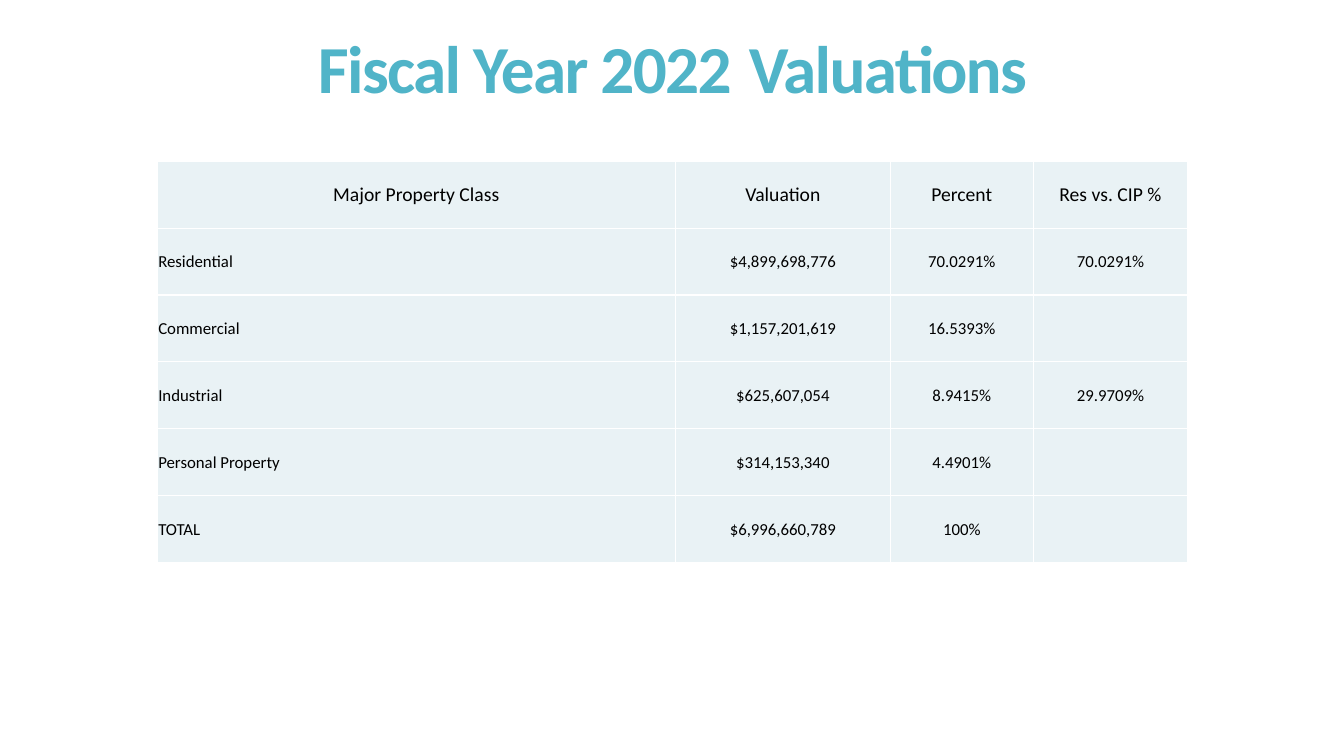
from dataclasses import dataclass

from lxml.etree import SubElement
from pptx import Presentation
from pptx.dml.color import RGBColor
from pptx.enum.text import MSO_ANCHOR, PP_ALIGN
from pptx.oxml.ns import qn
from pptx.util import Inches, Pt


@dataclass(frozen=True)
class Theme:
    font: str = "Calibri"
    title_color: str = "50B4C8"
    text_color: str = "000000"
    cell_color: str = "E9F2F5"
    border_color: str = "FFFFFF"
    title_size: int = 48
    title_gap_size: int = 54
    header_size: int = 14
    body_size: int = 12
    border_width: int = 1


THEME = Theme()

TITLE_SPANS = [
    ("Fiscal Year 2022", THEME.title_size),
    (" ", THEME.title_gap_size),
    ("Valuations", THEME.title_size),
]
COLUMN_WIDTHS = [5.14, 2.13, 1.42, 1.53]
ROW_HEIGHT = 3.98 / 6
VALUATIONS = [
    ["Major Property Class", "Valuation", "Percent", "Res vs. CIP %"],
    ["Residential", "$4,899,698,776", "70.0291%", "70.0291%"],
    ["Commercial", "$1,157,201,619", "16.5393%", ""],
    ["Industrial", "$625,607,054", "8.9415%", "29.9709%"],
    ["Personal Property", "$314,153,340", "4.4901%", ""],
    ["TOTAL", "$6,996,660,789", "100%", ""],
]


def style_font(font, size, color, bold=False):
    font.name = THEME.font
    font.size = Pt(size)
    font.bold = bold
    font.color.rgb = RGBColor.from_string(color)


def add_title(page):
    title = page.shapes.title
    title.left, title.top = Inches(0.92), Inches(0.15)
    title.width, title.height = Inches(11.5), Inches(1.1)
    title.text_frame.vertical_anchor = MSO_ANCHOR.MIDDLE
    title.text_frame.word_wrap = True
    para = title.text_frame.paragraphs[0]
    para.alignment = PP_ALIGN.CENTER
    para.line_spacing = 0.85
    for text, size in TITLE_SPANS:
        span = para.add_run()
        span.text = text
        style_font(span.font, size, THEME.title_color, bold=True)
        # Tighten letter spacing by 1.2 points
        span.font._element.set("spc", "-120")


def add_borders(cell):
    properties = cell._tc.get_or_add_tcPr()
    for side in ("a:lnL", "a:lnR", "a:lnT", "a:lnB"):
        line = SubElement(properties, qn(side), w=str(Pt(THEME.border_width)))
        fill = SubElement(line, qn("a:solidFill"))
        SubElement(fill, qn("a:srgbClr"), val=THEME.border_color)


def format_cell(cell, text, size, alignment):
    # Borders come before the fill in the cell properties
    add_borders(cell)
    cell.fill.solid()
    cell.fill.fore_color.rgb = RGBColor.from_string(THEME.cell_color)
    cell.vertical_anchor = MSO_ANCHOR.MIDDLE
    cell.margin_left = cell.margin_right = cell.margin_top = Inches(0.01)
    cell.margin_bottom = Inches(0)
    if text:
        para = cell.text_frame.paragraphs[0]
        para.text = text
        para.alignment = alignment
        style_font(para.runs[0].font, size, THEME.text_color)


def add_valuation_table(page):
    table = page.shapes.add_table(
        len(VALUATIONS), len(COLUMN_WIDTHS), Inches(1.56), Inches(1.6),
        Inches(sum(COLUMN_WIDTHS)), Inches(ROW_HEIGHT * len(VALUATIONS)),
    ).table
    for column, width in zip(table.columns, COLUMN_WIDTHS):
        column.width = Inches(width)

    for row_index, values in enumerate(VALUATIONS):
        is_header = row_index == 0
        size = THEME.header_size if is_header else THEME.body_size
        for column_index, text in enumerate(values):
            is_label = column_index == 0 and not is_header
            alignment = PP_ALIGN.LEFT if is_label else PP_ALIGN.CENTER
            format_cell(table.cell(row_index, column_index), text, size, alignment)


def main():
    deck = Presentation()
    deck.slide_width, deck.slide_height = Inches(13.33), Inches(7.5)
    # Title Only layout
    page = deck.slides.add_slide(deck.slide_layouts[5])
    add_title(page)
    add_valuation_table(page)
    deck.save("out.pptx")


if __name__ == "__main__":
    main()
